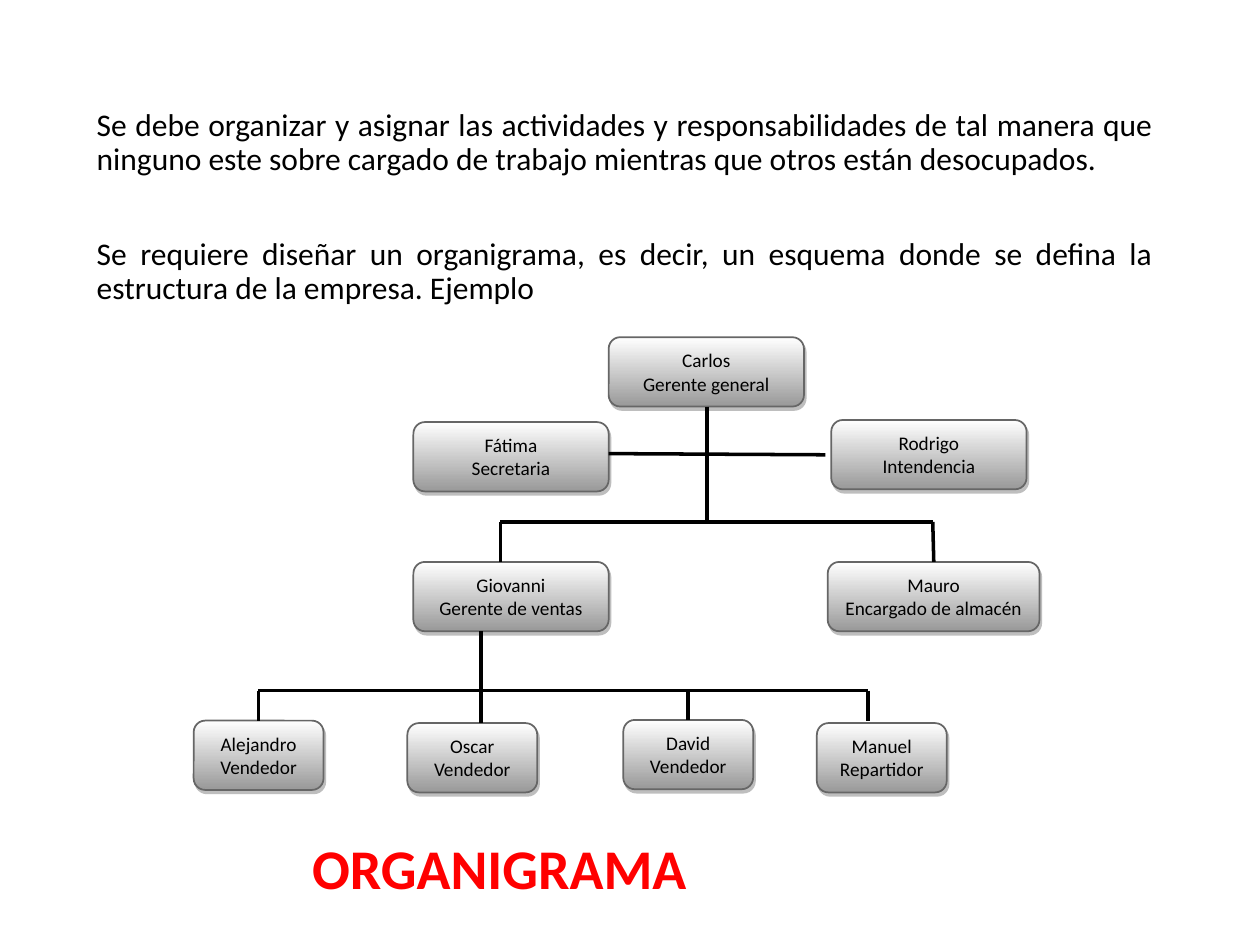
from dataclasses import dataclass

from lxml.etree import SubElement
from pptx import Presentation
from pptx.dml.color import RGBColor
from pptx.enum.shapes import MSO_CONNECTOR, MSO_SHAPE
from pptx.enum.text import MSO_ANCHOR, PP_ALIGN
from pptx.oxml.ns import qn
from pptx.slide import Slide
from pptx.util import Pt


@dataclass(frozen=True)
class Theme:
    font: str = "Calibri"
    ink: str = "000000"
    title: str = "FF0000"
    top: str = "FFFFFF"
    base: str = "999999"
    edge: str = "666666"
    shade: str = "7F7F7F"
    title_size: float = 32
    body_size: float = 18
    box_size: float = 11


@dataclass(frozen=True)
class Box:
    text: str
    left: float
    top: float
    width: float


@dataclass(frozen=True)
class Line:
    x1: float
    y1: float
    x2: float
    y2: float


THEME = Theme()
BOX_H = 39.6
WIDE, SLIM = 111.6, 74.2

BODY = (
    "Se debe organizar y asignar las actividades y responsabilidades de tal manera que "
    "ninguno este sobre cargado de trabajo mientras que otros están desocupados.",
    "Se requiere diseñar un organigrama, es decir, un esquema donde se defina la "
    "estructura de la empresa. Ejemplo",
)

BOXES = (
    Box("Carlos\nGerente general", 347.8, 192.7, WIDE),
    Box("Fátima\nSecretaria", 236.2, 241.2, WIDE),
    Box("Giovanni\nGerente de ventas", 236.2, 321.1, WIDE),
    Box("Rodrigo\nIntendencia", 475, 240, WIDE),
    Box("Mauro\nEncargado de almacén", 473, 321.1, 121),
    Box("Alejandro\nVendedor", 110.7, 411.8, SLIM),
    Box("Oscar\nVendedor", 232.8, 413.2, SLIM),
    Box("David Vendedor", 356.2, 411.4, SLIM),
    Box("Manuel\nRepartidor", 466.8, 413.2, SLIM),
)

BOSS_X, SALES_X = 404, 275
HEADS_Y, STAFF_Y = 298.2, 394.7
HEADS = ((286, 286), (533, 533.6))
STAFF = ((147.6, 411.8), (SALES_X, 413.2), (393.2, 411.4), (496, 411.8))

LINES = (
    Line(BOSS_X, 192.7 + BOX_H, BOSS_X, HEADS_Y),
    Line(347.8, 259.2, 471.6, 259.9),
    Line(HEADS[0][0], HEADS_Y, HEADS[-1][0], HEADS_Y),
    *(Line(start, HEADS_Y, end, 321.1) for start, end in HEADS),
    Line(SALES_X, 321.1 + BOX_H, SALES_X, STAFF_Y),
    Line(STAFF[0][0], STAFF_Y, STAFF[-1][0], STAFF_Y),
    *(Line(x, STAFF_Y, x, end) for x, end in STAFF),
)


def style(para, size: float, color: str, align: PP_ALIGN, bold: bool = False) -> None:
    para.alignment = align
    para.font.name = THEME.font
    para.font.size = Pt(size)
    para.font.bold = bold
    para.font.color.rgb = RGBColor.from_string(color)


def add_title(slide: Slide) -> None:
    title = slide.shapes.title
    title.left, title.top, title.width, title.height = Pt(76.3), Pt(473.8), Pt(612), Pt(62.6)
    frame = title.text_frame
    frame.text = "ORGANIGRAMA"
    frame.vertical_anchor = MSO_ANCHOR.BOTTOM
    frame.margin_left, frame.margin_bottom = Pt(102), Pt(21)
    para = frame.paragraphs[0]
    para.line_spacing = 0.9
    style(para, THEME.title_size, THEME.title, PP_ALIGN.LEFT, bold=True)


def add_body(slide: Slide) -> None:
    frame = slide.shapes.add_textbox(Pt(48.2), Pt(62.4), Pt(617.8), Pt(126)).text_frame
    frame.word_wrap = True
    frame.margin_top = 0
    frame.text = "\n".join(BODY)
    for index, para in enumerate(frame.paragraphs):
        style(para, THEME.body_size, THEME.ink, PP_ALIGN.JUSTIFY)
        para.line_spacing = 0.9
        para.space_before = Pt(34.8 * index)


def add_shadow(shape) -> None:
    """Give the shape a hard half-transparent shadow, down and to the right."""
    shape.shadow.inherit = False
    effects = shape._element.spPr.find(qn("a:effectLst"))
    shadow = SubElement(effects, qn("a:outerShdw"), blurRad="0", dist=str(Pt(2.2)),
                        dir=str(63 * 60000), algn="ctr", rotWithShape="0")
    color = SubElement(shadow, qn("a:srgbClr"), val=THEME.shade)
    SubElement(color, qn("a:alpha"), val="50000")


def add_box(slide: Slide, box: Box) -> None:
    shape = slide.shapes.add_shape(MSO_SHAPE.ROUNDED_RECTANGLE, Pt(box.left), Pt(box.top),
                                   Pt(box.width), Pt(BOX_H))
    shape.fill.gradient()
    shape.fill.gradient_angle = 270
    for stop, color, place in zip(shape.fill.gradient_stops, (THEME.top, THEME.base), (0, 1)):
        stop.color.rgb = RGBColor.from_string(color)
        stop.position = place
    shape.line.color.rgb = RGBColor.from_string(THEME.edge)
    shape.line.width = Pt(1)
    add_shadow(shape)
    frame = shape.text_frame
    frame.word_wrap = True
    frame.vertical_anchor = MSO_ANCHOR.MIDDLE
    frame.text = box.text
    for para in frame.paragraphs:
        style(para, THEME.box_size, THEME.ink, PP_ALIGN.CENTER)


def add_line(slide: Slide, line: Line) -> None:
    link = slide.shapes.add_connector(MSO_CONNECTOR.STRAIGHT, Pt(line.x1), Pt(line.y1),
                                      Pt(line.x2), Pt(line.y2))
    link.line.color.rgb = RGBColor.from_string(THEME.ink)
    link.line.width = Pt(2)
    SubElement(link._element.spPr, qn("a:effectLst"))


def main() -> None:
    deck = Presentation()
    deck.slide_width, deck.slide_height = Pt(720), Pt(540)
    slide = deck.slides.add_slide(deck.slide_layouts[5])
    add_title(slide)
    add_body(slide)
    for box in BOXES:
        add_box(slide, box)
    for line in LINES:
        add_line(slide, line)
    deck.save("out.pptx")


if __name__ == "__main__":
    main()
